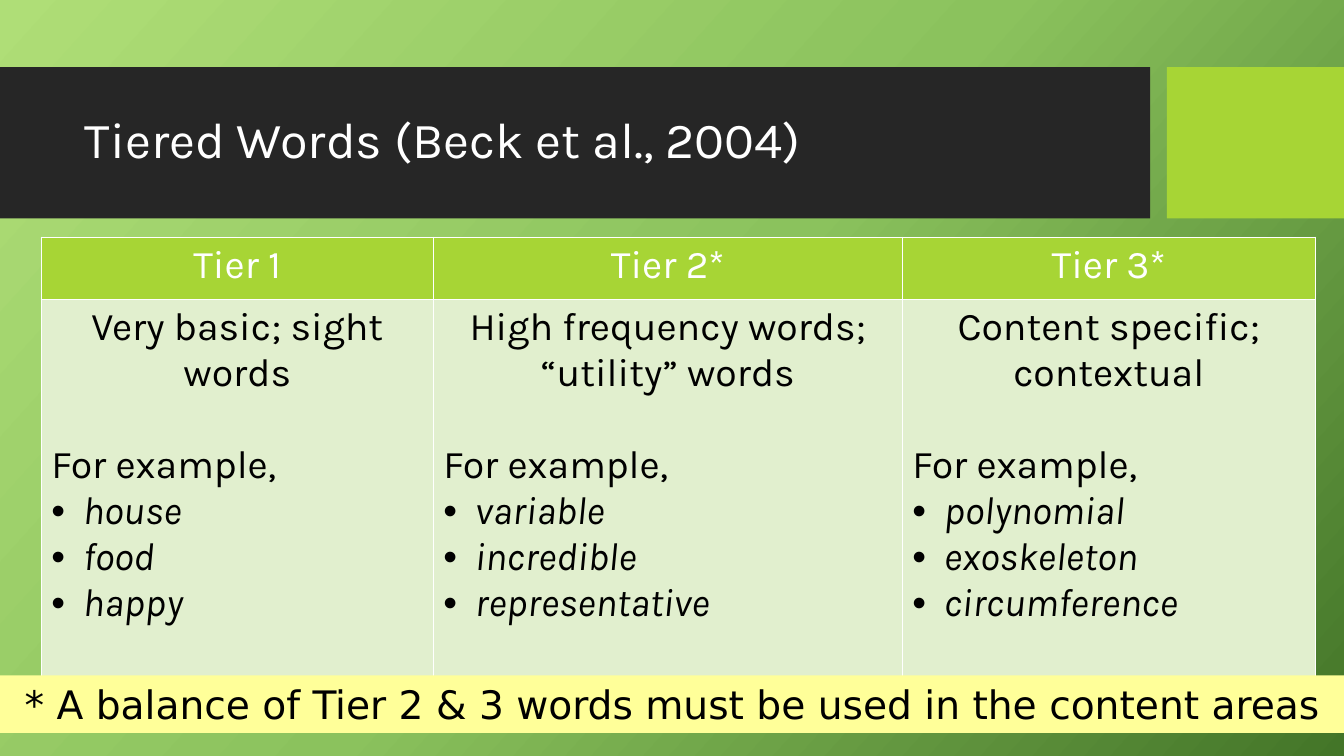
from copy import deepcopy

from pptx import Presentation
from pptx.dml import color
from pptx.enum import shapes, text
from pptx.oxml import ns, xmlchemy
from pptx.util import Pt

FONT = "Karla"
LIME, WHITE, BLACK = "A7D535", "FFFFFF", "000000"
TIERS = [
    ("Tier 1", "Very basic; sight words", ["house", "food", "happy"]),
    ("Tier 2*", "High frequency words; “utility” words",
     ["variable", "incredible", "representative"]),
    ("Tier 3*", "Content specific; contextual",
     ["polynomial", "exoskeleton", "circumference"]),
]
COLUMN_WIDTHS = [280, 335, 295]
ROW_HEIGHTS = [44.5, 309.5]


def rgb(value):
    return color.RGBColor.from_string(value)


def paint(fill, value):
    fill.solid()
    fill.fore_color.rgb = rgb(value)


def add_element(parent, tag, **attributes):
    element = xmlchemy.OxmlElement(tag)
    for name, value in attributes.items():
        element.set(name, str(value))
    parent.append(element)
    return element


def set_background(slide, stops, angle):
    fill = slide.background.fill
    fill.gradient()
    fill.gradient_angle = 360 - angle
    stop_list = slide.element.find(".//" + ns.qn("a:gsLst"))
    stop_list.insert(1, deepcopy(stop_list[0]))
    for stop, (position, value) in zip(fill.gradient_stops, stops):
        stop.position = position
        stop.color.rgb = rgb(value)


def add_bar(slide, left, top, width, height, fill):
    shape = slide.shapes.add_shape(
        shapes.MSO_SHAPE.RECTANGLE, Pt(left), Pt(top), Pt(width), Pt(height))
    shape.shadow.inherit = False
    paint(shape.fill, fill)
    shape.line.fill.background()
    return shape


def write(paragraph, words, size=28, font=FONT, ink=BLACK, italic=False,
          align=text.PP_ALIGN.LEFT):
    paragraph.text = words
    paragraph.alignment = align
    paragraph.font.size = Pt(size)
    paragraph.font.name = font
    paragraph.font.color.rgb = rgb(ink)
    paragraph.font.bold = False
    paragraph.font.italic = italic


def add_bullet(paragraph):
    properties = paragraph._p.get_or_add_pPr()
    properties.set("marL", str(Pt(22.5)))
    properties.set("indent", str(-Pt(22.5)))
    bullet_font = xmlchemy.OxmlElement("a:buFont")
    bullet_font.set("typeface", "Arial")
    bullet = xmlchemy.OxmlElement("a:buChar")
    bullet.set("char", "•")
    properties.insert_element_before(bullet_font, "a:tabLst", "a:defRPr", "a:extLst")
    properties.insert_element_before(bullet, "a:tabLst", "a:defRPr", "a:extLst")


def style_cell(cell, fill):
    properties = cell._tc.get_or_add_tcPr()
    for side in ("a:lnL", "a:lnR", "a:lnT", "a:lnB"):
        line = add_element(properties, side, w=Pt(1))
        add_element(add_element(line, "a:solidFill"), "a:srgbClr", val=WHITE)
    paint(cell.fill, fill)


def fill_tier(table, column, heading, meaning, examples):
    center = text.PP_ALIGN.CENTER
    header, body = table.cell(0, column), table.cell(1, column)
    style_cell(header, LIME)
    style_cell(body, "E1EFCE")
    write(header.text_frame.paragraphs[0], heading, ink=WHITE, align=center)
    frame = body.text_frame
    write(frame.paragraphs[0], meaning, align=center)
    lead = frame.add_paragraph()
    write(lead, "For example,")
    lead.space_before = Pt(33)
    for example in examples:
        paragraph = frame.add_paragraph()
        write(paragraph, example, italic=True)
        add_bullet(paragraph)


def add_tier_table(slide):
    frame = slide.shapes.add_table(
        len(ROW_HEIGHTS), len(TIERS), Pt(29.5), Pt(169.5),
        Pt(sum(COLUMN_WIDTHS)), Pt(sum(ROW_HEIGHTS)))
    table = frame.table
    for column, width in zip(table.columns, COLUMN_WIDTHS):
        column.width = Pt(width)
    for row, height in zip(table.rows, ROW_HEIGHTS):
        row.height = Pt(height)
    for column, tier in enumerate(TIERS):
        fill_tier(table, column, *tier)


def place_title(slide, words):
    title = slide.shapes.title
    title.left, title.top, title.width, title.height = Pt(53.5), Pt(59), Pt(757), Pt(85)
    title.element.getparent().append(title.element)
    title.text_frame.vertical_anchor = text.MSO_ANCHOR.MIDDLE
    paragraph = title.text_frame.paragraphs[0]
    write(paragraph, words, size=36, ink=WHITE)
    paragraph.line_spacing = 0.9


def add_note(slide, words):
    note = add_bar(slide, 0, 482.5, 960, 41, "FFFF99")
    note.text_frame.word_wrap = False
    note.text_frame.vertical_anchor = text.MSO_ANCHOR.MIDDLE
    write(note.text_frame.paragraphs[0], words, font="DejaVu Sans",
          align=text.PP_ALIGN.CENTER)


def main():
    presentation = Presentation()
    presentation.slide_width, presentation.slide_height = Pt(960), Pt(540)
    slide = presentation.slides.add_slide(presentation.slide_layouts[5])
    set_background(slide, [(0, "AFDE77"), (0.5, "8BC25D"), (1, "437528")], 42)
    add_bar(slide, 0, 48, 821.5, 108, "262626")
    add_bar(slide, 833.5, 48, 126.5, 108, LIME)
    place_title(slide, "Tiered Words (Beck et al., 2004)")
    add_tier_table(slide)
    add_note(slide, "* A balance of Tier 2 & 3 words must be used in the content areas")
    presentation.save("out.pptx")


if __name__ == "__main__":
    main()
